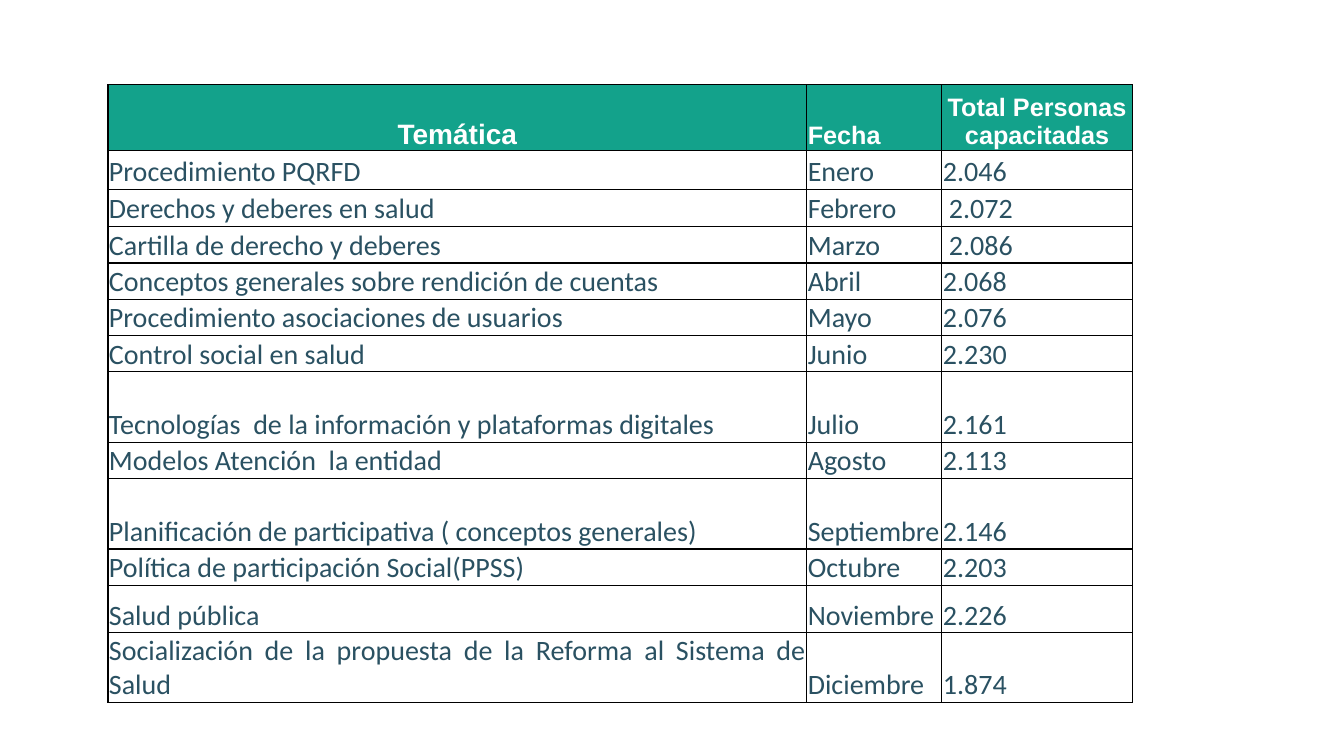
from dataclasses import dataclass

from lxml import etree
from pptx import Presentation, util as u
from pptx.dml.color import RGBColor
from pptx.enum import text
from pptx.oxml.ns import qn


@dataclass(frozen=True)
class Theme:
    header_fill: str = "13A28B"
    header_ink: str = "FFFFFF"
    body_fill: str = "FFFFFF"
    body_ink: str = "2A5162"
    border: str = "000000"
    header_font: str = "Arial"
    body_font: str = "Calibri"
    large: int = 20
    medium: int = 18
    border_width: int = 1


HEADINGS = ("Temática", "Fecha", "Total Personas capacitadas")
SHORT, MEDIUM, TALL = 4.8, 6.27, 9.33
HEADER_HEIGHT = 8.67
COLUMN_WIDTHS = (52, 10.05, 14.18)

# Topic, month, people trained, row height in % of the slide
TRAININGS = (
    ("Procedimiento PQRFD", "Enero", "2.046", 5.2),
    ("Derechos y deberes en salud", "Febrero", "2.072", SHORT),
    ("Cartilla de derecho y deberes", "Marzo", "2.086", SHORT),
    ("Conceptos generales sobre rendición de cuentas", "Abril", "2.068", SHORT),
    ("Procedimiento asociaciones de usuarios", "Mayo", "2.076", SHORT),
    ("Control social en salud", "Junio", "2.230", SHORT),
    ("Tecnologías  de la información y plataformas digitales", "Julio", "2.161", TALL),
    ("Modelos Atención  la entidad", "Agosto", "2.113", SHORT),
    ("Planificación de participativa ( conceptos generales)", "Septiembre", "2.146", TALL),
    ("Política de participación Social(PPSS)", "Octubre", "2.203", SHORT),
    ("Salud pública", "Noviembre", "2.226", MEDIUM),
    ("Socialización de la propuesta de la Reforma al Sistema de Salud",
     "Diciembre", "1.874", 8.53),
)
INSET_MONTHS = ("Febrero", "Marzo")


class SlideBuilder:
    def __init__(self, deck, theme):
        self.deck = deck
        self.theme = theme
        self.slide = deck.slides.add_slide(deck.slide_layouts[6])

    def across(self, percent):
        return round(self.deck.slide_width * percent / 100)

    def down(self, percent):
        return round(self.deck.slide_height * percent / 100)

    def table(self, left, top, widths, heights):
        """Add an unstyled table; all lengths are % of the slide."""
        grid = self.slide.shapes.add_table(
            len(heights), len(widths), self.across(left), self.down(top),
            self.across(sum(widths)), self.down(sum(heights))).table
        grid.first_row = grid.horz_banding = False
        for column, width in zip(grid.columns, widths):
            column.width = self.across(width)
        for row, height in zip(grid.rows, heights):
            row.height = self.down(height)
        return grid

    def borders(self, cell):
        properties = cell._tc.get_or_add_tcPr()
        for side in ("lnL", "lnR", "lnT", "lnB"):
            line = etree.SubElement(properties, qn(f"a:{side}"),
                                    w=str(u.Pt(self.theme.border_width)))
            fill = etree.SubElement(line, qn("a:solidFill"))
            etree.SubElement(fill, qn("a:srgbClr"), val=self.theme.border)

    def cell(self, cell, wording, align, size, header=False, inset=False):
        """Fill one cell; inset cells have side margins and hang from the top."""
        theme = self.theme
        self.borders(cell)
        cell.fill.solid()
        cell.fill.fore_color.rgb = RGBColor.from_string(
            theme.header_fill if header else theme.body_fill)
        cell.margin_left = cell.margin_right = u.Inches(0.07 if inset else 0.01)
        cell.margin_top = u.Inches(0 if inset else 0.01)
        cell.margin_bottom = 0
        cell.vertical_anchor = (text.MSO_ANCHOR.TOP if inset
                                else text.MSO_ANCHOR.BOTTOM)
        cell.text_frame.text = wording
        paragraph = cell.text_frame.paragraphs[0]
        paragraph.alignment = align
        if inset:
            paragraph.line_spacing = 1.07
            paragraph.space_after = u.Pt(8)
        font = paragraph.runs[0].font
        font.name = theme.header_font if header else theme.body_font
        font.size = u.Pt(size)
        font.bold = header
        font.color.rgb = RGBColor.from_string(
            theme.header_ink if header else theme.body_ink)


def main():
    deck = Presentation()
    deck.slide_width, deck.slide_height = u.Inches(13.33), u.Inches(7.5)
    theme = Theme()
    builder = SlideBuilder(deck, theme)
    heights = [HEADER_HEIGHT] + [training[-1] for training in TRAININGS]
    trainings = builder.table(8.03, 11.2, COLUMN_WIDTHS, heights)

    align = text.PP_ALIGN
    heading_styles = ((align.CENTER, theme.large), (align.LEFT, theme.medium),
                      (align.CENTER, theme.medium))
    for column, (heading, style) in enumerate(zip(HEADINGS, heading_styles)):
        builder.cell(trainings.cell(0, column), heading, *style, header=True)

    for row, (topic, month, people, _) in enumerate(TRAININGS, start=1):
        for column, wording in enumerate((topic, month, people)):
            builder.cell(trainings.cell(row, column), wording, align.JUSTIFY,
                         theme.large,
                         inset=column == 2 and month in INSET_MONTHS)
    deck.save("out.pptx")


if __name__ == "__main__":
    main()
